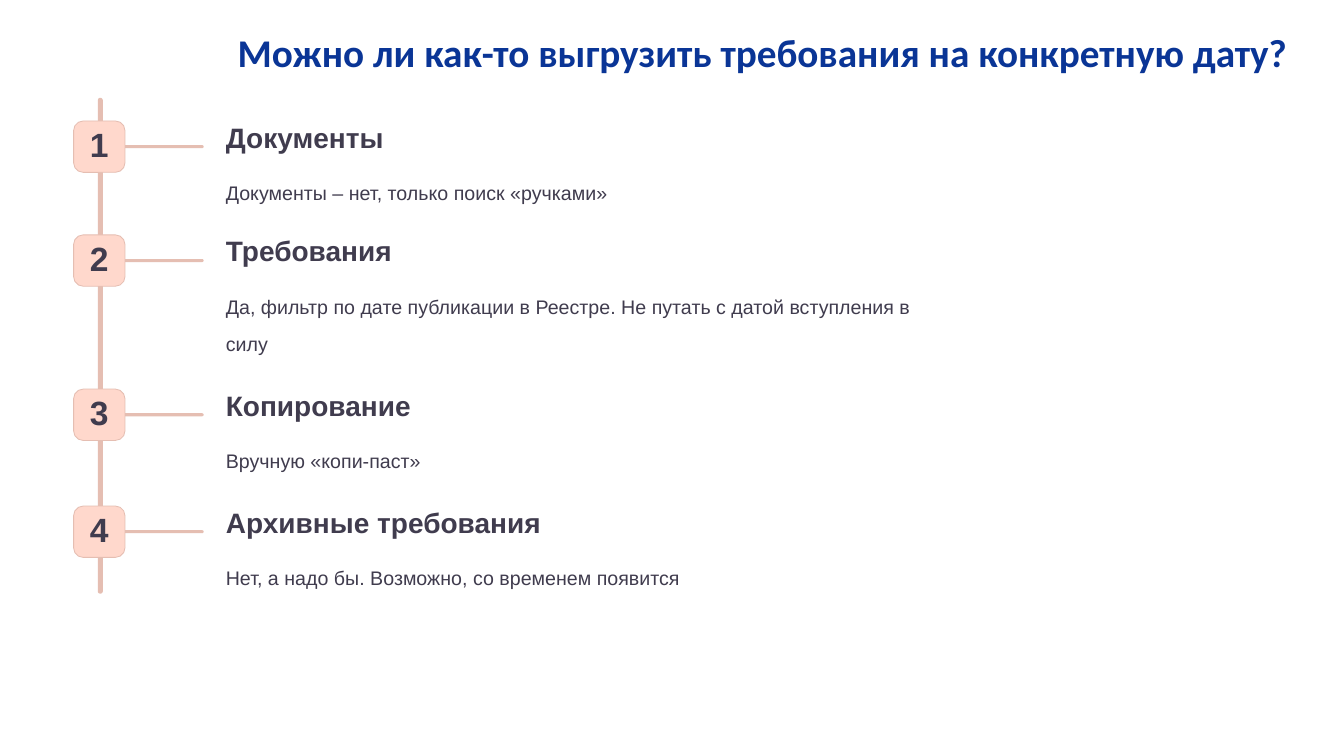
from pptx import Presentation
from pptx.dml.color import RGBColor
from pptx.enum.shapes import MSO_SHAPE
from pptx.enum.text import MSO_ANCHOR, PP_ALIGN
from pptx.util import Inches, Pt

NAVY = RGBColor(0x0A, 0x35, 0x96)
INK = RGBColor(0x40, 0x3C, 0x4E)
PEACH = RGBColor(0xFF, 0xD8, 0xCC)
ROSE = RGBColor(0xE5, 0xBE, 0xB2)

# Top of each badge, heading, answer, answer height, whether the answer wraps
STEPS = [
    (1.2, "Документы", "Документы – нет, только поиск «ручками»", 0.37, False),
    (2.33, "Требования",
     "Да, фильтр по дате публикации в Реестре. Не путать с датой вступления в силу",
     0.73, True),
    (3.86, "Копирование", "Вручную «копи-паст»", 0.37, False),
    (5.02, "Архивные требования",
     "Нет, а надо бы. Возможно, со временем появится", 0.73, True),
]


def write(frame, text, size, color=INK, font="Arial", bold=False,
          align=PP_ALIGN.LEFT, spacing=None):
    paragraph = frame.paragraphs[0]
    paragraph.alignment = align
    paragraph.line_spacing = spacing
    run = paragraph.add_run()
    run.text = text
    run.font.size = Pt(size)
    run.font.name = font
    run.font.bold = bold
    run.font.color.rgb = color


class TimelineSlide:
    TEXT_LEFT = 2.24
    BADGE_LEFT = 0.73
    BADGE_SIZE = 0.51

    def __init__(self, deck):
        self.slide = deck.slides.add_slide(deck.slide_layouts[5])

    def title(self, text):
        heading = self.slide.shapes.title
        heading.left, heading.top = Inches(0.92), Inches(0.28)
        heading.width, heading.height = Inches(12.03), Inches(0.52)
        frame = heading.text_frame
        frame.word_wrap = True
        frame.vertical_anchor = MSO_ANCHOR.MIDDLE
        frame.margin_right = Inches(0.19)
        write(frame, text, 28, NAVY, "Calibri", True, PP_ALIGN.RIGHT, 0.9)

    def block(self, left, top, width, height, fill=ROSE, rounding=0.5, outline=None):
        block = self.slide.shapes.add_shape(
            MSO_SHAPE.ROUNDED_RECTANGLE,
            Inches(left), Inches(top), Inches(width), Inches(height))
        block.adjustments[0] = rounding
        block.shadow.inherit = False
        block.fill.solid()
        block.fill.fore_color.rgb = fill
        if outline is None:
            block.line.fill.background()
        else:
            block.line.color.rgb = outline
            block.line.width = Pt(0.6)

    def label(self, text, left, top, width, height, size, wrap=False, **style):
        frame = self.slide.shapes.add_textbox(
            Inches(left), Inches(top), Inches(width), Inches(height)).text_frame
        frame.word_wrap = wrap
        frame.margin_left = frame.margin_right = 0
        frame.margin_top = frame.margin_bottom = 0
        write(frame, text, size, **style)

    def step(self, number, top, heading, answer, answer_height, wrap):
        # Branch and numbered badge
        self.block(1.22, top + 0.24, 0.8, 0.03)
        self.block(self.BADGE_LEFT, top, self.BADGE_SIZE, self.BADGE_SIZE,
                   PEACH, 0.187, ROSE)
        self.label(str(number), self.BADGE_LEFT + 0.15, top + 0.09, 0.21, 0.34, 24,
                   bold=True, align=PP_ALIGN.CENTER, spacing=Pt(24.5))
        # Heading and answer
        self.label(heading, self.TEXT_LEFT, top - 0.03, 3.5, 0.36, 20,
                   bold=True, spacing=Pt(25.5))
        self.label(answer, self.TEXT_LEFT, top + 0.47, 6.8, answer_height, 14,
                   wrap=wrap, spacing=Pt(26))


def main():
    deck = Presentation()
    deck.slide_width, deck.slide_height = Inches(13.33), Inches(7.5)
    timeline = TimelineSlide(deck)
    timeline.title("Можно ли как-то выгрузить требования на конкретную дату?")

    # Vertical axis, then the steps along it
    timeline.block(0.97, 0.97, 0.05, 4.92)
    for number, step in enumerate(STEPS, start=1):
        timeline.step(number, *step)

    deck.save("out.pptx")


if __name__ == "__main__":
    main()
